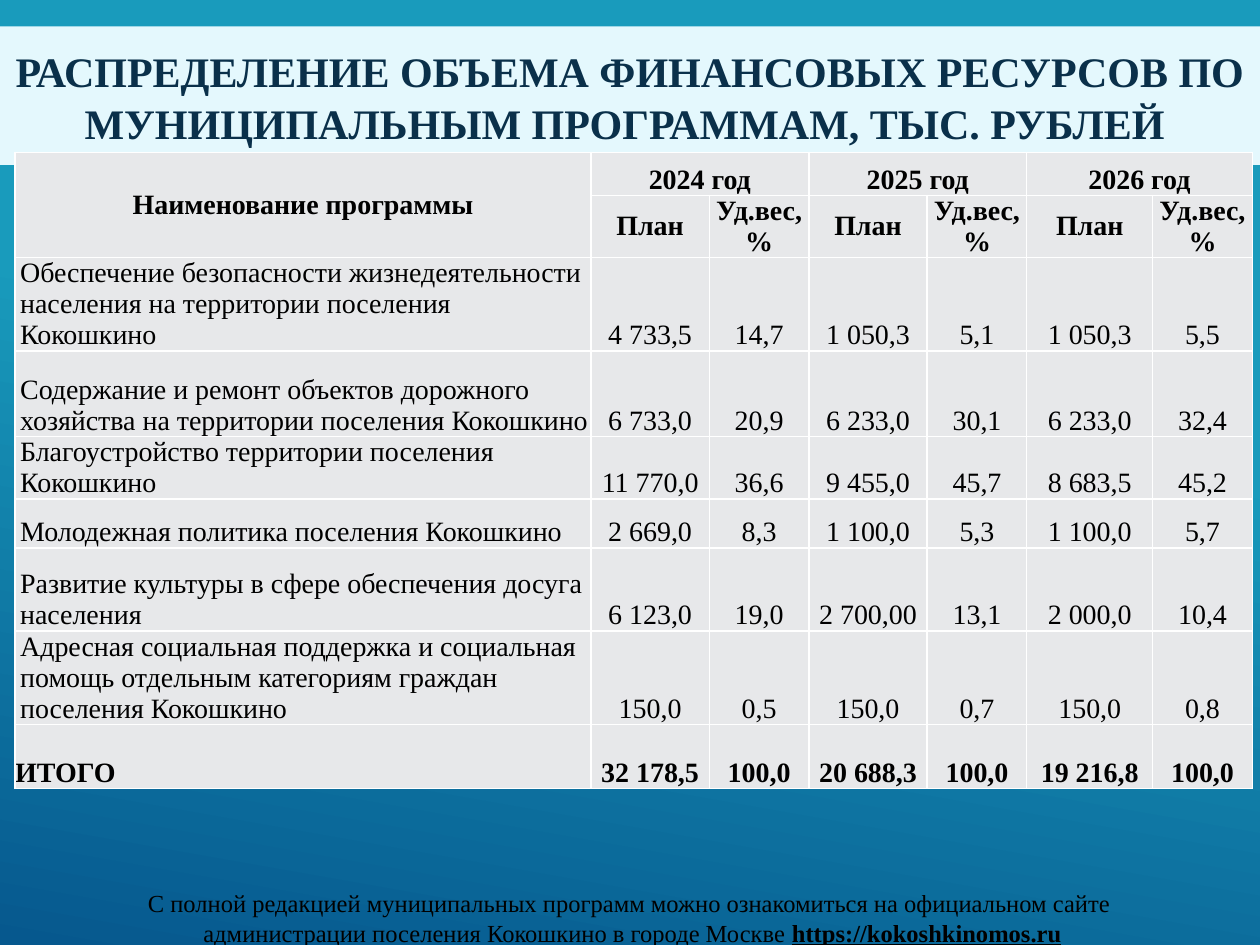
from lxml import etree
from pptx import Presentation
from pptx import util as u
from pptx.dml import color
from pptx.enum import text
from pptx.oxml import ns

FACE = "Times New Roman"
COLS = [4.57, 0.94, 0.79, 0.94, 0.79, 1, 0.79]
ROWS = [0.34, 0.35, 0.68, 0.68, 0.1, 0.39, 0.66, 0.68, 0.51]
YEARS = ["2024 год", "2025 год", "2026 год"]
DATA = [
    ["Обеспечение безопасности жизнедеятельности населения на территории поселения Кокошкино",
     "4 733,5", "14,7", "1 050,3", "5,1", "1 050,3", "5,5"],
    ["Содержание и ремонт объектов дорожного хозяйства на территории поселения Кокошкино",
     "6 733,0", "20,9", "6 233,0", "30,1", "6 233,0", "32,4"],
    ["Благоустройство территории поселения Кокошкино",
     "11 770,0", "36,6", "9 455,0", "45,7", "8 683,5", "45,2"],
    ["Молодежная политика поселения Кокошкино",
     "2 669,0", "8,3", "1 100,0", "5,3", "1 100,0", "5,7"],
    ["Развитие культуры в сфере обеспечения досуга населения",
     "6 123,0", "19,0", "2 700,00", "13,1", "2 000,0", "10,4"],
    ["Адресная социальная поддержка и социальная помощь отдельным категориям граждан поселения Кокошкино",
     "150,0", "0,5", "150,0", "0,7", "150,0", "0,8"],
    ["ИТОГО", "32 178,5", "100,0", "20 688,3", "100,0", "19 216,8", "100,0"],
]


def rgb(code):
    return color.RGBColor.from_string(code)


def style(para, size, code="000000", bold=False, align=text.PP_ALIGN.CENTER):
    para.alignment = align
    font = para.font
    font.name, font.size, font.bold = FACE, u.Pt(size), bold
    font.color.rgb = rgb(code)


def add_back(slide):
    fill = slide.background.fill
    fill.gradient()
    fill.gradient_angle = 260
    for stop, place, code in zip(fill.gradient_stops, (0.41, 1), ("199BBC", "06588E")):
        stop.position = place
        stop.color.rgb = rgb(code)


def add_title(slide, left, top, width, height):
    title = slide.shapes.title
    title.left, title.top = u.Inches(left), u.Inches(top)
    title.width, title.height = u.Inches(width), u.Inches(height)
    title.fill.solid()
    title.fill.fore_color.rgb = rgb("E4F8FD")
    frame = title.text_frame
    frame.text = "РАСПРЕДЕЛЕНИЕ ОБЪЕМА ФИНАНСОВЫХ РЕСУРСОВ ПО МУНИЦИПАЛЬНЫМ ПРОГРАММАМ, ТЫС. РУБЛЕЙ "
    frame.vertical_anchor = text.MSO_ANCHOR.MIDDLE
    frame.auto_size = text.MSO_AUTO_SIZE.NONE
    para = frame.paragraphs[0]
    style(para, 24, "0A304A", True)
    para.line_spacing = u.Pt(30)


def add_edges(cell):
    props = cell._tc.get_or_add_tcPr()
    for i, side in enumerate(("lnL", "lnR", "lnT", "lnB")):
        line = etree.Element(ns.qn("a:" + side), w=str(u.Pt(1)))
        solid = etree.SubElement(line, ns.qn("a:solidFill"))
        etree.SubElement(solid, ns.qn("a:srgbClr"), val="FFFFFF")
        props.insert(i, line)


def fill_cell(cell, words, row, col):
    cell.text = words
    cell.margin_left = cell.margin_right = cell.margin_top = cell.margin_bottom = 0
    middle = row == 1 or (row == 0 and col == 0)
    cell.vertical_anchor = text.MSO_ANCHOR.MIDDLE if middle else text.MSO_ANCHOR.BOTTOM
    cell.fill.solid()
    cell.fill.fore_color.rgb = rgb("E7E8EA")
    add_edges(cell)
    last = len(ROWS) - 1
    name = col == 0 and row > 1
    para = cell.text_frame.paragraphs[0]
    style(para, 16, bold=row < 2 or row == last,
          align=text.PP_ALIGN.LEFT if name else text.PP_ALIGN.CENTER)
    if name and row < last:
        props = para._p.get_or_add_pPr()
        props.set("marL", str(u.Inches(0.04)))
        props.set("indent", "0")


def add_grid(slide, left, top):
    frame = slide.shapes.add_table(
        len(ROWS), len(COLS), u.Inches(left), u.Inches(top),
        u.Inches(sum(COLS)), u.Inches(sum(ROWS)))
    table = frame.table
    table.first_row = table.horz_banding = False
    for col, width in zip(table.columns, COLS):
        col.width = u.Inches(width)
    for row, height in zip(table.rows, ROWS):
        row.height = u.Inches(height)
    heads = ["Наименование программы"]
    for year in YEARS:
        heads += [year, ""]
    lines = [heads, [""] + ["План", "Уд.вес, %"] * len(YEARS)] + DATA
    for r, line in enumerate(lines):
        for c, words in enumerate(line):
            fill_cell(table.cell(r, c), words, r, c)
    table.cell(0, 0).merge(table.cell(1, 0))
    for c in range(1, len(COLS), 2):
        table.cell(0, c).merge(table.cell(0, c + 1))


def add_note(slide, left, top, width, height):
    box = slide.shapes.add_textbox(
        u.Inches(left), u.Inches(top), u.Inches(width), u.Inches(height))
    frame = box.text_frame
    frame.word_wrap = True
    frame.auto_size = text.MSO_AUTO_SIZE.SHAPE_TO_FIT_TEXT
    frame.text = ("С полной редакцией муниципальных программ можно ознакомиться на официальном сайте \n"
                  "администрации поселения Кокошкино в городе Москве ")
    for para in frame.paragraphs:
        style(para, 14)
    site = para.add_run()
    site.text = "https://kokoshkinomos.ru"
    site.font.bold = site.font.underline = True


def main():
    deck = Presentation()
    deck.slide_width, deck.slide_height = u.Inches(10), u.Inches(7.5)
    slide = deck.slides.add_slide(deck.slide_layouts[5])
    add_back(slide)
    add_title(slide, 0, 0.21, 10, 1.1)
    add_grid(slide, 0.12, 1.21)
    add_note(slide, 0.04, 7, 9.96, 0.57)
    deck.save("out.pptx")


if __name__ == "__main__":
    main()
